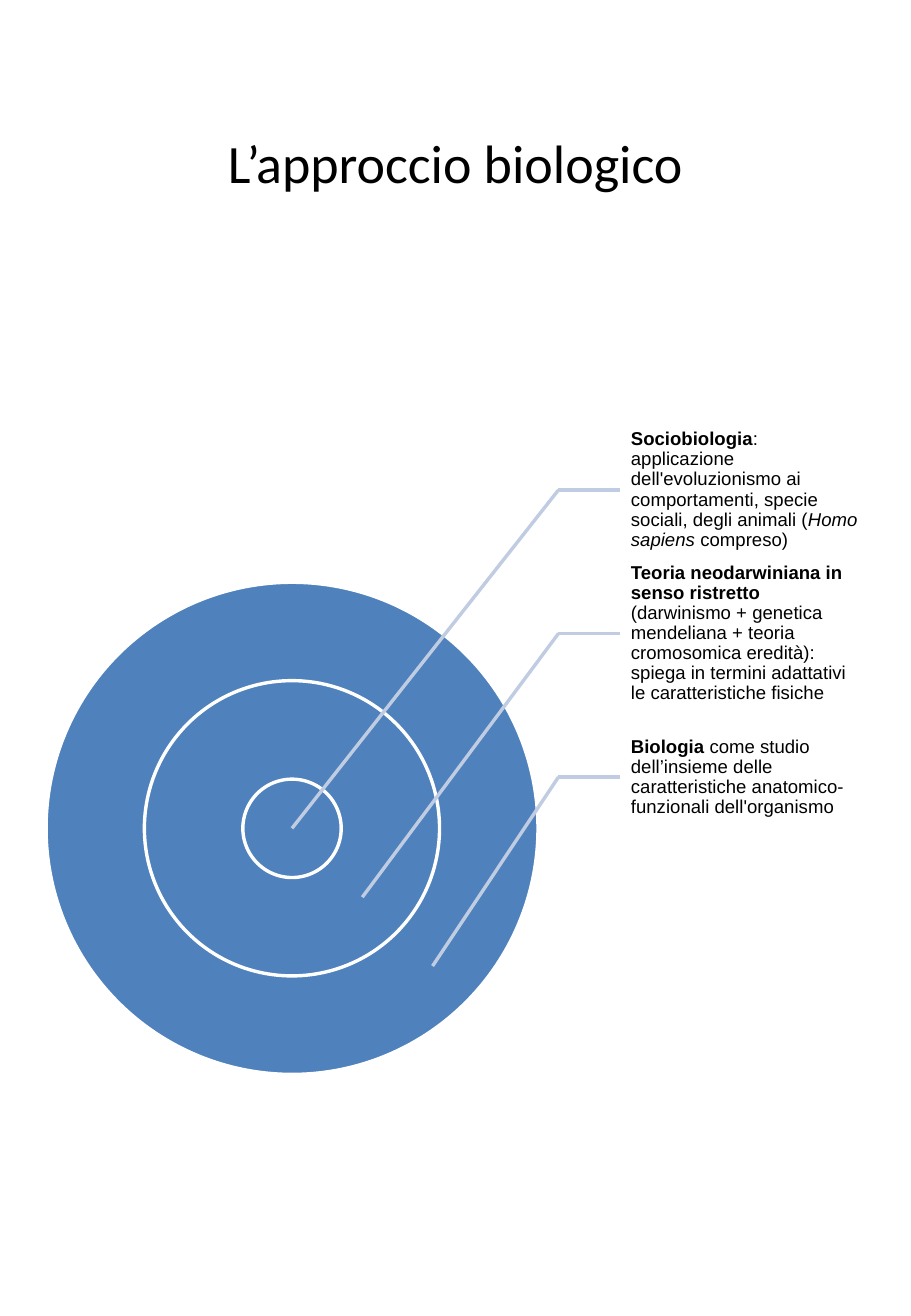
from lxml import etree
from pptx import Presentation
from pptx.dml.color import RGBColor
from pptx.enum.shapes import MSO_CONNECTOR, MSO_SHAPE
from pptx.enum.text import MSO_ANCHOR, MSO_AUTO_SIZE, PP_ALIGN
from pptx.oxml.ns import qn
from pptx.util import Pt

OVAL = MSO_SHAPE.OVAL
STRAIGHT = MSO_CONNECTOR.STRAIGHT
MIDDLE = MSO_ANCHOR.MIDDLE
CENTER, LEFT = PP_ALIGN.CENTER, PP_ALIGN.LEFT
FIXED = MSO_AUTO_SIZE.NONE

BLACK, WHITE, BLUE, PALE = "000000", "FFFFFF", "4F81BD", "C0CCE1"
STROKE = 2
RINGS = (1, 0.6, 0.2)  # diameters as shares of the outer disc

# Each label is a list of (text, style) with style "", "b" or "i"
LABELS = [
    [("Sociobiologia", "b"),
     (": applicazione dell'evoluzionismo ai comportamenti, specie sociali, "
      "degli animali (", ""),
     ("Homo sapiens ", "i"),
     ("compreso)", "")],
    [("Teoria neodarwiniana in senso ristretto ", "b"),
     ("(darwinismo + genetica mendeliana + teoria cromosomica eredità): "
      "spiega in termini adattativi le caratteristiche fisiche", "")],
    [("Biologia", "b"),
     (" come studio dell’insieme delle caratteristiche "
      "anatomico-funzionali dell'organismo", "")],
]


def color(code):
    return RGBColor.from_string(code)


def style(run, font, size):
    run.font.name = font
    run.font.size = Pt(size)
    run.font.color.rgb = color(BLACK)


def frame(shape, insets):
    """Set up a wrapped, vertically centred text frame."""
    text = shape.text_frame
    text.word_wrap = True
    text.auto_size = FIXED
    text.vertical_anchor = MIDDLE
    (text.margin_left, text.margin_top,
     text.margin_right, text.margin_bottom) = map(Pt, insets)
    return text


def add_title(slide, left, top, width, height):
    title = slide.shapes.title
    title.left, title.top = Pt(left), Pt(top)
    title.width, title.height = Pt(width), Pt(height)
    text = frame(title, (5, 3, 5, 3))
    text.text = "L’approccio biologico"
    para = text.paragraphs[0]
    para.alignment = CENTER
    style(para.runs[0], "Calibri", 32)


def add_line(slide, start, end):
    line = slide.shapes.add_connector(STRAIGHT, *map(Pt, start + end))
    line.line.color.rgb = color(PALE)
    line.line.width = Pt(STROKE)
    props = line._element.spPr
    etree.SubElement(props, qn("a:effectLst"))


def add_rings(slide, left, top, size):
    for share in RINGS:
        width = size * share
        gap = (size - width) / 2
        ring = slide.shapes.add_shape(
            OVAL, Pt(left + gap), Pt(top + gap), Pt(width), Pt(width))
        ring.shadow.inherit = False
        ring.fill.solid()
        ring.fill.fore_color.rgb = color(BLUE)
        ring.line.color.rgb = color(WHITE)
        ring.line.width = Pt(STROKE)


def add_label(slide, parts, left, top, width, height):
    box = slide.shapes.add_textbox(Pt(left), Pt(top), Pt(width), Pt(height))
    para = frame(box, (6.5, 1.4, 1.4, 1.4)).paragraphs[0]
    para.alignment = LEFT
    para.line_spacing = 0.9
    for words, look in parts:
        run = para.add_run()
        run.text = words
        style(run, "Arial", 11)
        run.font.bold = look == "b"
        run.font.italic = look == "i"


def add_target(slide, left, top, size):
    """Draw the nested discs with a label and a bent leader for each."""
    add_rings(slide, left, top, size)
    mid_x, mid_y = left + size / 2, top + size / 2
    text_x, text_y = left + size * 7 / 6, top - size / 3
    row = size * 7 / 24
    bend = text_x - size / 8
    for i, parts in enumerate(LABELS):
        label_y = text_y + i * row
        add_label(slide, parts, text_x, label_y, size / 2, row)
        elbow = (bend, label_y + row / 2)
        tip = (mid_x + i * size / 7, mid_y + i * size * 0.14)
        add_line(slide, elbow, (text_x, elbow[1]))
        add_line(slide, elbow, tip)


def main():
    deck = Presentation()
    deck.slide_width, deck.slide_height = Pt(540), Pt(779.76)
    slide = deck.slides.add_slide(deck.slide_layouts[5])
    add_title(slide, 27, 31.2, 486, 130)
    add_target(slide, 27.3, 345, 291.6)
    deck.save("out.pptx")


if __name__ == "__main__":
    main()
